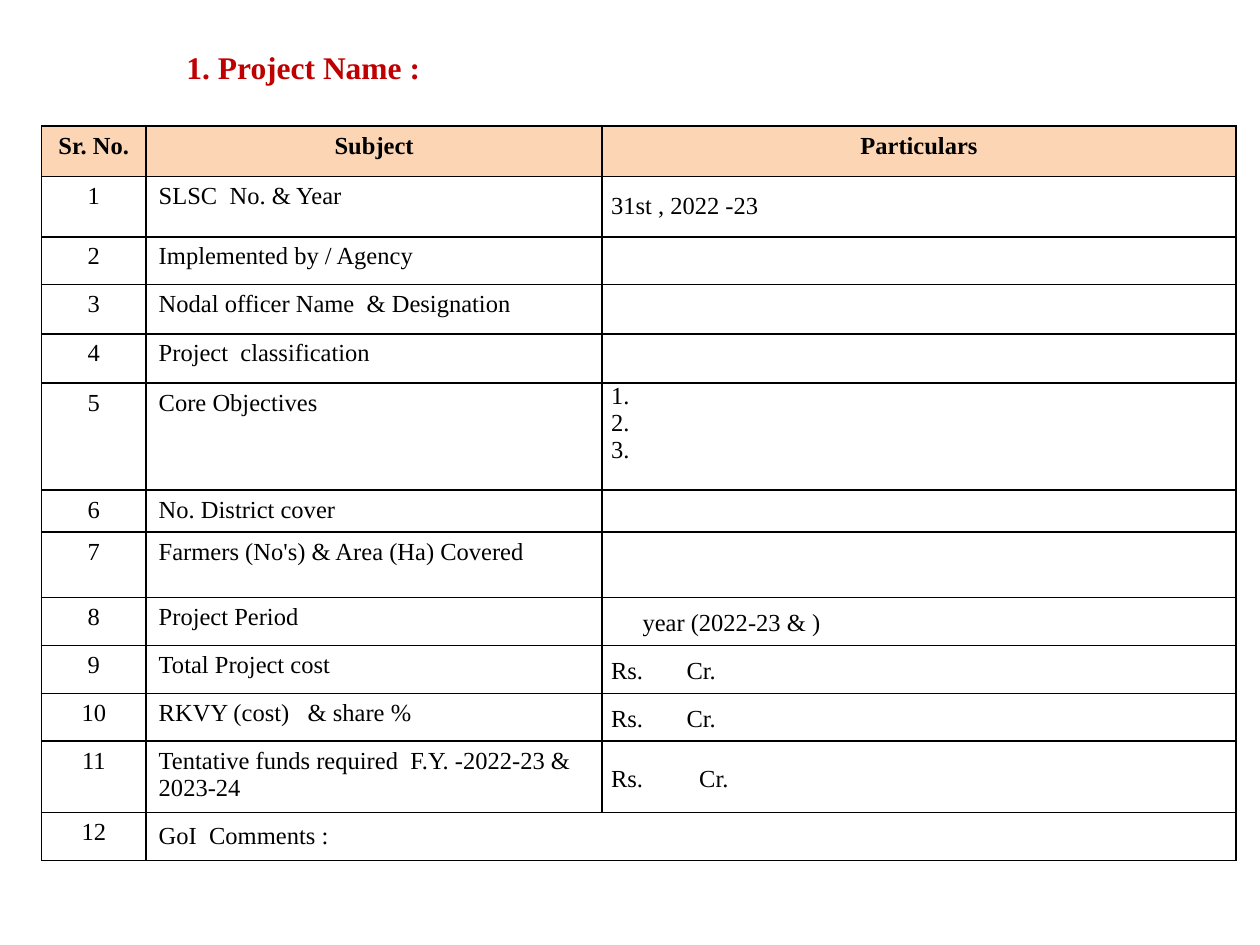
from lxml.etree import SubElement
from pptx import Presentation
from pptx.dml.color import RGBColor
from pptx.enum.text import MSO_ANCHOR, PP_ALIGN
from pptx.oxml.ns import qn
from pptx.util import Inches, Pt

FONT = "Times New Roman"
COLUMNS = [0.83, 3.62, 5.03]
ROW_HEIGHTS = [0.4, 0.48, 0.38, 0.39, 0.39, 0.85, 0.33,
               0.52, 0.38, 0.38, 0.38, 0.43, 0.38]
HEADERS = ["Sr. No.", "Subject", "Particulars"]
SUBJECTS = ["SLSC  No. & Year", "Implemented by / Agency",
            "Nodal officer Name  & Designation", "Project  classification",
            "Core Objectives", "No. District cover",
            "Farmers (No's) & Area (Ha) Covered", "Project Period",
            "Total Project cost", "RKVY (cost)   & share %",
            "Tentative funds required  F.Y. -2022-23 & 2023-24",
            "GoI  Comments :"]
OBJECTIVES_ROW, PERIOD_ROW, COMMENTS_ROW = 5, 8, 12
PARTICULARS = {1: "31st , 2022 -23", OBJECTIVES_ROW: "1.\n2.\n3.",
               PERIOD_ROW: "year (2022-23 & )",
               9: "Rs.\tCr.", 10: "Rs.\tCr.", 11: "Rs.\tCr."}
AMOUNT_TABS = {9: 0.6, 10: 0.6, 11: 0.7}


def color(value):
    return RGBColor.from_string(value)


def style(p, size, bold=False, fill="000000"):
    p.font.name = FONT
    p.font.size = Pt(size)
    p.font.bold = bold
    p.font.color.rgb = color(fill)


def add_title(slide, text, width):
    tf = slide.shapes.add_textbox(0, Inches(0.33), width, Inches(0.75)).text_frame
    tf.word_wrap = True
    tf.margin_left = Inches(1.48)
    tf.text = text
    style(tf.paragraphs[0], 18, True, "C00000")


def set_borders(cell):
    """Draw 1 pt black lines on all four sides, ahead of the cell's fill."""
    tc_pr = cell._tc.get_or_add_tcPr()
    for i, side in enumerate(("lnL", "lnR", "lnT", "lnB")):
        ln = SubElement(tc_pr, qn(f"a:{side}"), w=str(Pt(1)))
        fill = SubElement(ln, qn("a:solidFill"))
        SubElement(fill, qn("a:srgbClr"), val="000000")
        tc_pr.insert(i, ln)


def fill_cell(cell, text, bold=False, align=PP_ALIGN.LEFT, anchor=MSO_ANCHOR.TOP):
    cell.text = text
    cell.vertical_anchor = anchor
    for p in cell.text_frame.paragraphs:
        p.alignment = align
        style(p, 14, bold)


def set_tab_stop(p, inches):
    tabs = SubElement(p._p.get_or_add_pPr(), qn("a:tabLst"))
    SubElement(tabs, qn("a:tab"), pos=str(Inches(inches)), algn="l")
    p._p.pPr.insert_element_before(tabs, "a:defRPr")


def fill_particulars(cell, row):
    cell.margin_left = cell.margin_right = Inches(0.07)
    cell.margin_top = cell.margin_bottom = 0
    anchor = MSO_ANCHOR.TOP if row == OBJECTIVES_ROW else MSO_ANCHOR.MIDDLE
    fill_cell(cell, PARTICULARS.get(row, ""), anchor=anchor)
    p = cell.text_frame.paragraphs[0]
    if row >= PERIOD_ROW:
        p.line_spacing = 1.15
    if row == PERIOD_ROW:
        cell.margin_left = Inches(0.32)
    if row in AMOUNT_TABS:
        set_tab_stop(p, AMOUNT_TABS[row])


def add_project_table(slide):
    table = slide.shapes.add_table(
        len(ROW_HEIGHTS), len(COLUMNS), Inches(0.33), Inches(1),
        Inches(sum(COLUMNS)), Inches(sum(ROW_HEIGHTS))).table
    for column, width in zip(table.columns, COLUMNS):
        column.width = Inches(width)
    for row, height in zip(table.rows, ROW_HEIGHTS):
        row.height = Inches(height)
    for cell in table.iter_cells():
        cell.fill.background()
        set_borders(cell)

    for col, text in enumerate(HEADERS):
        cell = table.cell(0, col)
        fill_cell(cell, text, True, PP_ALIGN.CENTER)
        cell.fill.solid()
        cell.fill.fore_color.rgb = color("FCD5B5")
    for row, subject in enumerate(SUBJECTS, 1):
        fill_cell(table.cell(row, 0), str(row), align=PP_ALIGN.CENTER)
        fill_cell(table.cell(row, 1), subject)
        if row < COMMENTS_ROW:
            fill_particulars(table.cell(row, 2), row)

    comments = table.cell(COMMENTS_ROW, 1)
    comments.merge(table.cell(COMMENTS_ROW, 2))
    comments.vertical_anchor = MSO_ANCHOR.MIDDLE


def main():
    prs = Presentation()
    prs.slide_width, prs.slide_height = Inches(10), Inches(7.5)
    slide = prs.slides.add_slide(prs.slide_layouts[6])
    add_title(slide, "1. Project Name :", prs.slide_width)
    add_project_table(slide)
    prs.save("out.pptx")


if __name__ == "__main__":
    main()
